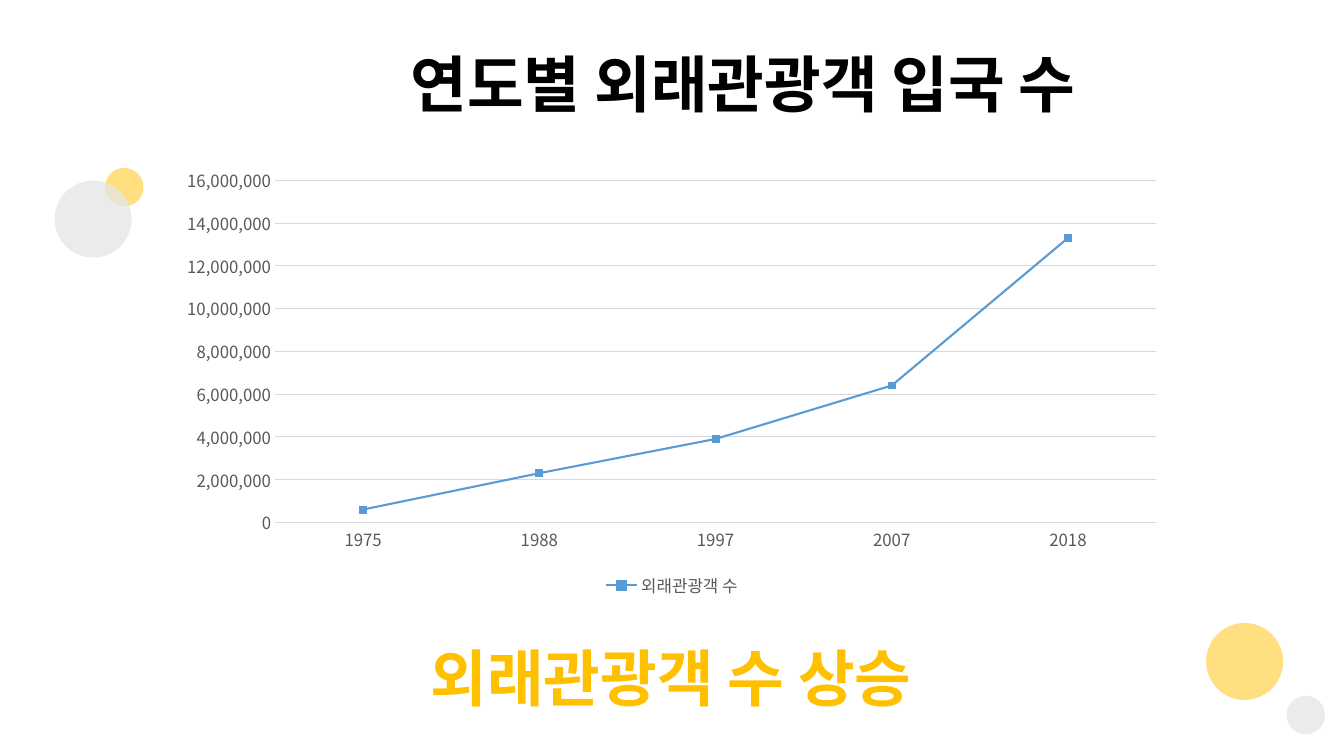
from lxml import etree
from pptx import Presentation
from pptx.chart.data import CategoryChartData
from pptx.dml.color import RGBColor
from pptx.enum.chart import XL_CHART_TYPE, XL_LEGEND_POSITION, XL_MARKER_STYLE, XL_TICK_MARK
from pptx.enum.shapes import MSO_SHAPE
from pptx.enum.text import MSO_AUTO_SIZE, PP_ALIGN
from pptx.oxml.ns import qn
from pptx.util import Pt

LINE_MARKERS = XL_CHART_TYPE.LINE_MARKERS
BOTTOM = XL_LEGEND_POSITION.BOTTOM
SQUARE = XL_MARKER_STYLE.SQUARE
NO_TICK = XL_TICK_MARK.NONE
OVAL = MSO_SHAPE.OVAL
FIT_SHAPE = MSO_AUTO_SIZE.SHAPE_TO_FIT_TEXT
CENTER = PP_ALIGN.CENTER

FONT = "Noto Sans CJK KR"
COLORS = {
    "black": "000000",
    "yellow": "FFC000",
    "gray": "E7E6E6",
    "blue": "5B9BD5",
    "orange": "ED7D31",
    "silver": "A5A5A5",
    "label": "595959",
    "grid": "D9D9D9",
}
YEARS = ["1975", "1988", "1997", "2007", "2018"]
EMPTY = [None] * len(YEARS)
SERIES = [
    ("외래관광객 수", [600000, 2300000, 3900000, 6400000, 13300000], "blue"),
    ("Series 2", EMPTY, "orange"),
    ("Series 3", EMPTY, "silver"),
]
CIRCLES = [
    (75, 120, 27.5, 0, "yellow", 50),
    (39, 129, 55, 0, "gray", 80),
    (919, 497, 27.5, 58.3, "gray", 80),
    (861.5, 445, 55, 58.3, "yellow", 50),
]


def rgb(name):
    return RGBColor.from_string(COLORS[name])


def style_font(font, size, color, bold=False):
    font.name = FONT
    font.size = Pt(size)
    font.bold = bold
    font.color.rgb = rgb(color)


def add_heading(slide, text, left, top, width, color, wrap):
    tf = slide.shapes.add_textbox(Pt(left), Pt(top), Pt(width), Pt(60.5)).text_frame
    tf.word_wrap = wrap
    tf.auto_size = FIT_SHAPE
    p = tf.paragraphs[0]
    p.text = text
    p.alignment = CENTER
    style_font(p.runs[0].font, 44, color, True)


def add_circle(slide, left, top, size, rotation, color, opacity):
    sp = slide.shapes.add_shape(OVAL, Pt(left), Pt(top), Pt(size), Pt(size))
    sp.rotation = rotation
    sp.shadow.inherit = False
    sp.line.fill.background()
    sp.fill.solid()
    sp.fill.fore_color.rgb = rgb(color)
    clr = sp._element.spPr.find(".//" + qn("a:srgbClr"))
    etree.SubElement(clr, qn("a:alpha"), val=str(opacity * 1000))


def style_line(line, color, width):
    line.color.rgb = rgb(color)
    line.width = Pt(width)


def style_series(series, color):
    series.smooth = False
    style_line(series.format.line, color, 1.5)
    marker = series.marker
    marker.style = SQUARE
    marker.size = 5
    marker.format.fill.solid()
    marker.format.fill.fore_color.rgb = rgb(color)
    marker.format.line.fill.background()


def hide_legend_entries(legend, indexes):
    position = legend._element.find(qn("c:legendPos"))
    for index in reversed(indexes):
        entry = etree.Element(qn("c:legendEntry"))
        etree.SubElement(entry, qn("c:idx"), val=str(index))
        etree.SubElement(entry, qn("c:delete"), val="1")
        position.addnext(entry)


def place_plot(chart, **fractions):
    plot_area = chart._chartSpace.chart.plotArea
    for old in plot_area.findall(qn("c:layout")):
        plot_area.remove(old)
    layout = etree.Element(qn("c:layout"))
    manual = etree.SubElement(layout, qn("c:manualLayout"))
    etree.SubElement(manual, qn("c:layoutTarget"), val="inner")
    for side in ("x", "y"):
        etree.SubElement(manual, qn(f"c:{side}Mode"), val="edge")
    for key, value in fractions.items():
        etree.SubElement(manual, qn(f"c:{key}"), val=str(value))
    plot_area.insert(0, layout)


def add_visitor_chart(slide, left, top, width, height):
    data = CategoryChartData(number_format="#,##0")
    data.categories = YEARS
    for name, values, _ in SERIES:
        data.add_series(name, values)
    chart = slide.shapes.add_chart(
        LINE_MARKERS, Pt(left), Pt(top), Pt(width), Pt(height), data).chart
    chart.has_title = False
    style_font(chart.font, 10, "black")
    chart.has_legend = True
    chart.legend.position = BOTTOM
    chart.legend.include_in_layout = False
    style_font(chart.legend.font, 12, "label")
    hide_legend_entries(chart.legend, [1, 2])

    years, counts = chart.category_axis, chart.value_axis
    for axis in (years, counts):
        axis.major_tick_mark = NO_TICK
        axis.minor_tick_mark = NO_TICK
        style_font(axis.tick_labels.font, 12, "label")
    style_line(years.format.line, "grid", 0.75)
    counts.format.line.fill.background()
    counts.minimum_scale = 0
    counts.maximum_scale = 16000000
    counts.major_unit = 2000000
    counts.tick_labels.number_format = "#,##0"
    counts.tick_labels.number_format_is_linked = False
    style_line(counts.major_gridlines.format.line, "grid", 0.75)

    plot = chart.plots[0]
    plot.vary_by_categories = False
    for series, (_, _, color) in zip(plot.series, SERIES):
        style_series(series, color)
    place_plot(chart, x=77 / width, y=14.8 / height, w=629.3 / width, h=244.4 / height)


def main():
    """Build the slide on yearly foreign visitor arrivals."""
    prs = Presentation()
    prs.slide_width, prs.slide_height = Pt(960), Pt(540)
    slide = prs.slides.add_slide(prs.slide_layouts[6])
    add_heading(slide, "연도별 외래관광객 입국 수", 256, 29.5, 550, "black", False)
    for circle in CIRCLES:
        add_circle(slide, *circle)
    add_visitor_chart(slide, 119.5, 114, 720.5, 316)
    add_heading(slide, "외래관광객 수 상승", 227.5, 453.5, 504, "yellow", True)
    prs.save("out.pptx")


if __name__ == "__main__":
    main()
